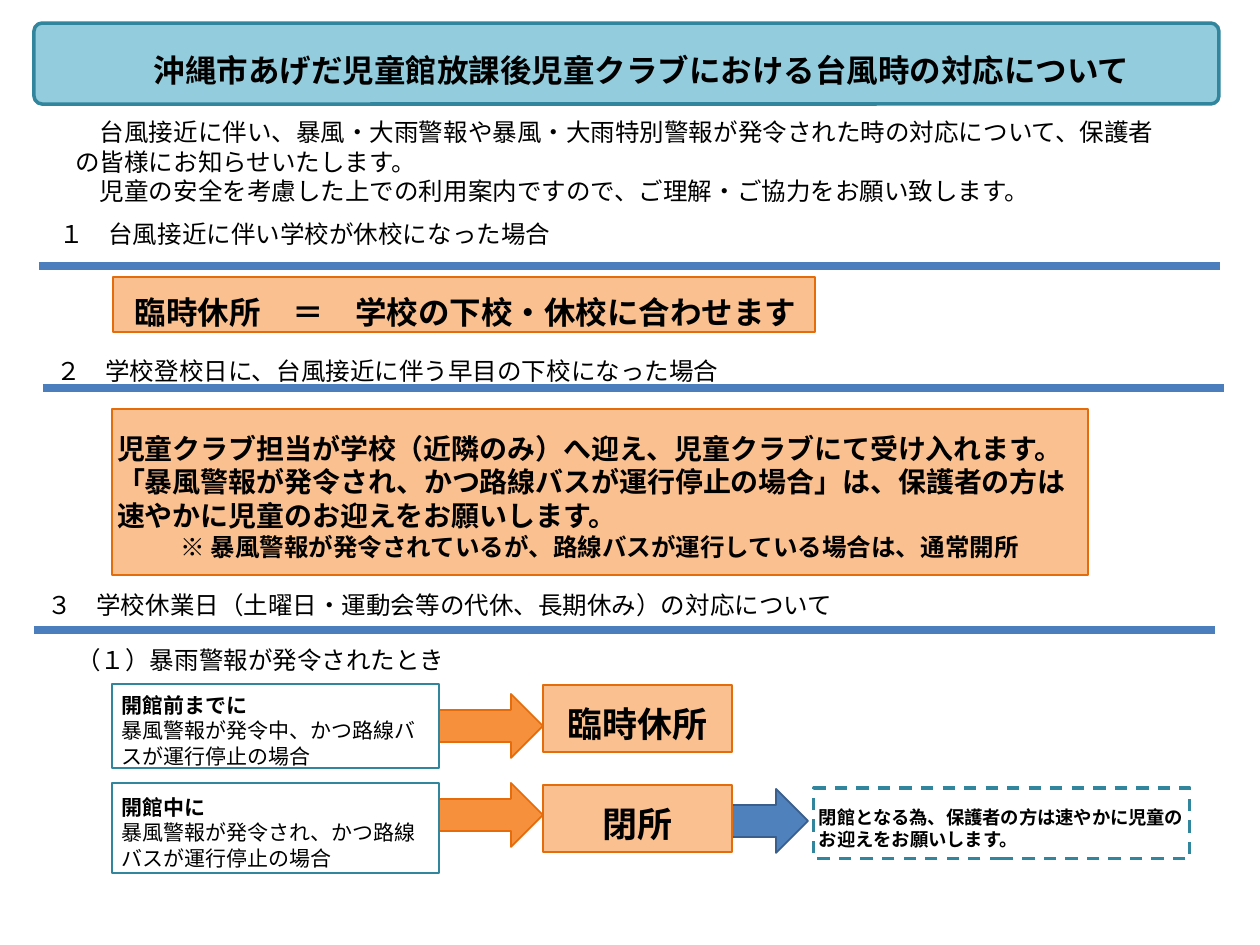
"""Build the slide on how a children's club responds to typhoons."""
from lxml.etree import SubElement
from pptx import Presentation
from pptx.dml.color import RGBColor
from pptx.enum.dml import MSO_LINE
from pptx.enum.shapes import MSO_CONNECTOR, MSO_SHAPE as SHAPE
from pptx.enum.text import MSO_ANCHOR as ANCHOR, MSO_AUTO_SIZE, PP_ALIGN as ALIGN
from pptx.oxml.ns import qn
from pptx.util import Inches, Pt

SCALE = Inches(1) / 126
FONT = "Noto Sans CJK JP"
BLACK = RGBColor(0x00, 0x00, 0x00)
WHITE = RGBColor(0xFF, 0xFF, 0xFF)
AQUA = RGBColor(0x93, 0xCD, 0xDD)
TEAL = RGBColor(0x31, 0x85, 0x9C)
PEACH = RGBColor(0xFA, 0xC0, 0x90)
ORANGE = RGBColor(0xF6, 0x90, 0x3C)
DARK_ORANGE = RGBColor(0xE4, 0x6C, 0x0A)
BLUE = RGBColor(0x4F, 0x81, 0xBD)
NAVY = RGBColor(0x3A, 0x5F, 0x8C)
RULE_BLUE = RGBColor(0x4B, 0x7E, 0xBC)


def px(length):
    return round(length * SCALE)


def apply_format(target, **values):
    for name, value in values.items():
        setattr(target, name, value)


def write(shape, lines, size, bold=False, align=ALIGN.LEFT, anchor=ANCHOR.MIDDLE, insets=None):
    """Write one paragraph per line; a line is a text or a (text, overrides) pair."""
    frame = shape.text_frame
    apply_format(frame, word_wrap=True, auto_size=MSO_AUTO_SIZE.NONE, vertical_anchor=anchor)
    if insets:
        sides = ("margin_left", "margin_top", "margin_right", "margin_bottom")
        apply_format(frame, **dict(zip(sides, map(px, insets))))
    for index, line in enumerate(lines):
        text, changes = line if isinstance(line, tuple) else (line, {})
        style = {"size": size, "bold": bold, "align": align} | changes
        paragraph = frame.add_paragraph() if index else frame.paragraphs[0]
        paragraph.alignment = style["align"]
        run = paragraph.add_run()
        run.text = text
        apply_format(run.font, name=FONT, size=Pt(style["size"]), bold=style["bold"])
        run.font.color.rgb = BLACK
        SubElement(run.font._element, qn("a:ea"), typeface=FONT)


def add_text(slide, box, lines, size=14, **style):
    write(slide.shapes.add_textbox(*map(px, box)), lines, size, **style)


def add_shape(slide, kind, box, fill, line, width):
    shape = slide.shapes.add_shape(kind, *map(px, box))
    shape.shadow.inherit = False
    shape.fill.solid()
    shape.fill.fore_color.rgb = fill
    shape.line.color.rgb = line
    shape.line.width = Pt(width)
    return shape


def add_box(slide, box, lines, size, fill=PEACH, line=DARK_ORANGE, width=1.25, left=5, **style):
    shape = add_shape(slide, SHAPE.RECTANGLE, box, fill, line, width)
    write(shape, lines, size, insets=(left, 15, 5, 6), **style)
    return shape


def add_heading(slide, box, text, rule_left, rule_top):
    rule = slide.shapes.add_connector(
        MSO_CONNECTOR.STRAIGHT, *map(px, (rule_left, rule_top, rule_left + 1181, rule_top)))
    rule.line.color.rgb = RULE_BLUE
    rule.line.width = Pt(4.25)
    SubElement(rule._element.spPr, qn("a:effectLst"))
    add_text(slide, box, [text])


def add_title(slide):
    banner = add_shape(slide, SHAPE.ROUNDED_RECTANGLE, (34, 23, 1185, 81), AQUA, TEAL, 2)
    banner.adjustments[0] = 0.1
    title = slide.shapes.title
    left, top, width, height = map(px, (101, 35, 1081, 69))
    apply_format(title, left=left, top=top, width=width, height=height)
    write(title, ["沖縄市あげだ児童館放課後児童クラブにおける台風時の対応について"], 18,
          bold=True, align=ALIGN.CENTER)
    banner.element.addnext(title.element)


def add_case(slide, box, timing, condition, arrow_top, result, result_top):
    add_shape(slide, SHAPE.RIGHT_ARROW, (378, arrow_top, 165, 64), ORANGE, DARK_ORANGE, 1)
    add_box(slide, box, [(timing, {"bold": True}), condition], 12,
            fill=WHITE, line=TEAL, left=10)
    add_box(slide, (543, result_top, 189, 67), [result], 20, bold=True, align=ALIGN.CENTER)


def main():
    presentation = Presentation()
    apply_format(presentation, slide_width=Inches(10), slide_height=Inches(7.5))
    slide = presentation.slides.add_slide(presentation.slide_layouts[5])
    add_title(slide)
    add_text(slide, (63, 117, 1120, 89), [
        "　台風接近に伴い、暴風・大雨警報や暴風・大雨特別警報が発令された時の対応について、保護者の皆様にお知らせいたします。",
        "　児童の安全を考慮した上での利用案内ですので、ご理解・ご協力をお願い致します。",
    ])

    add_heading(slide, (47, 208, 794, 52), "１　台風接近に伴い学校が休校になった場合", 39, 266)
    add_shape(slide, SHAPE.RECTANGLE, (113, 277, 702, 55), PEACH, DARK_ORANGE, 1.25)
    add_text(slide, (116, 287, 699, 50), ["臨時休所　＝　学校の下校・休校に合わせます"], 18,
             bold=True, align=ALIGN.CENTER, anchor=ANCHOR.TOP)

    add_heading(slide, (44, 334, 892, 73),
                "２　学校登校日に、台風接近に伴う早目の下校になった場合", 43, 388)
    add_box(slide, (112, 409, 976, 166), [
        "児童クラブ担当が学校（近隣のみ）へ迎え、児童クラブにて受け入れます。",
        "「暴風警報が発令され、かつ路線バスが運行停止の場合」は、保護者の方は速やかに児童のお迎えをお願いします。",
        ("※ 暴風警報が発令されているが、路線バスが運行している場合は、通常開所",
         {"size": 14, "align": ALIGN.CENTER}),
    ], 16, bold=True)

    add_heading(slide, (35, 580, 892, 49),
                "３　学校休業日（土曜日・運動会等の代休、長期休み）の対応について", 34, 630)
    add_text(slide, (64, 635, 794, 49), ["（１）暴雨警報が発令されたとき"])
    add_case(slide, (112, 684, 327, 84), "開館前までに",
             "暴風警報が発令中、かつ路線バスが運行停止の場合", 694, "臨時休所", 685)
    add_shape(slide, SHAPE.RIGHT_ARROW, (703, 789, 105, 64), BLUE, NAVY, 1)
    add_case(slide, (112, 783, 327, 90), "開館中に",
             "暴風警報が発令され、かつ路線バスが運行停止の場合", 783, "閉所", 785)
    notice = add_box(slide, (814, 788, 376, 71),
                     ["閉館となる為、保護者の方は速やかに児童のお迎えをお願いします。"], 10.5,
                     fill=WHITE, line=TEAL, width=1.75, bold=True)
    notice.line.dash_style = MSO_LINE.DASH
    presentation.save("out.pptx")


if __name__ == "__main__":
    main()
